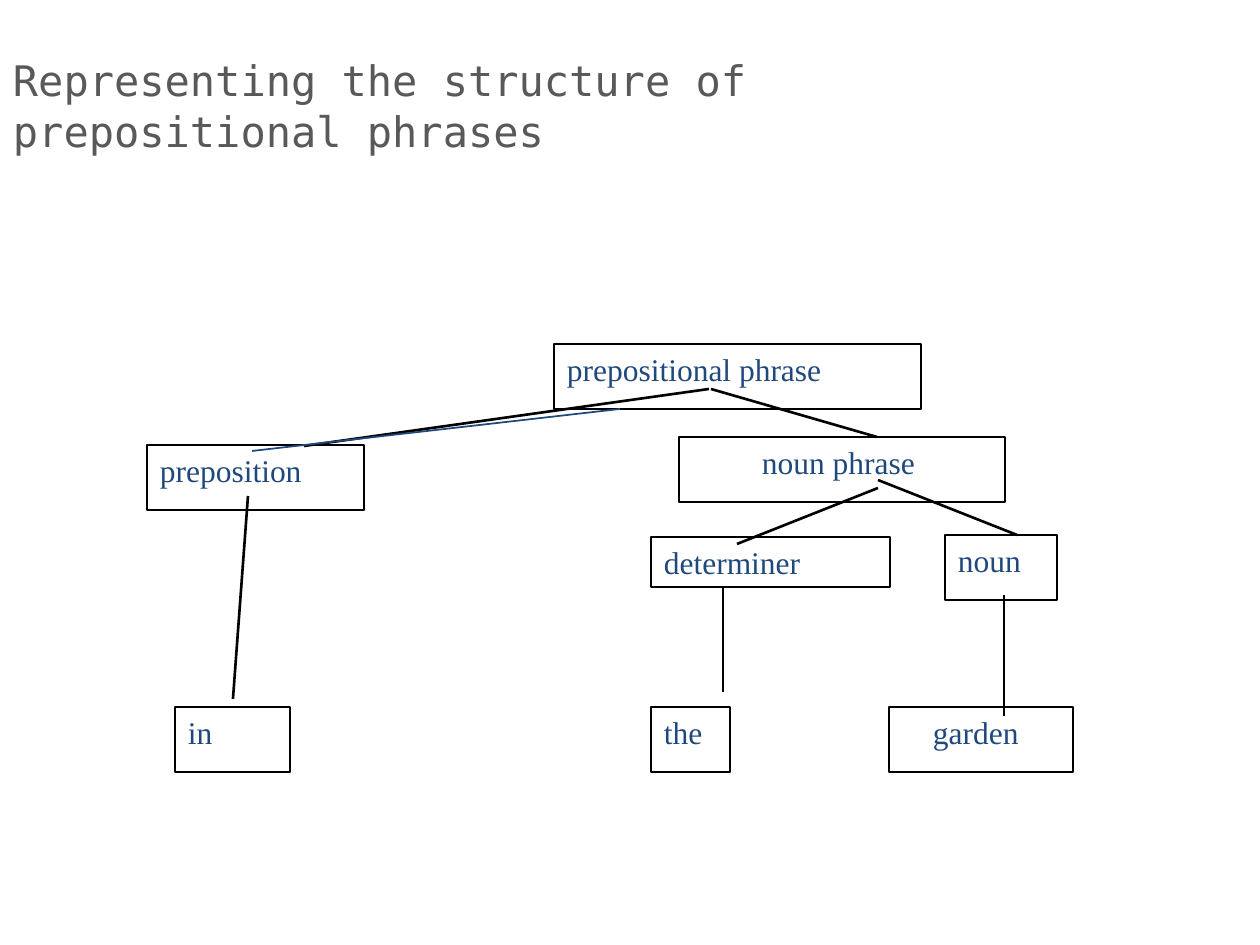
"""Build a slide with the phrase-structure tree of a prepositional phrase."""
from dataclasses import dataclass

from lxml.etree import SubElement
from pptx import Presentation
from pptx.dml.color import RGBColor
from pptx.enum.shapes import MSO_CONNECTOR as Connector, MSO_SHAPE as Shape
from pptx.enum.text import MSO_ANCHOR as Anchor, PP_ALIGN as Align
from pptx.oxml.ns import qn
from pptx.slide import Slide
from pptx.text.text import TextFrame
from pptx.util import Emu, Inches, Pt

PX_PER_INCH = 126
INSET = 13
BLACK = RGBColor(0x00, 0x00, 0x00)
GRAY = RGBColor(0x59, 0x59, 0x59)
NAVY = RGBColor(0x1F, 0x49, 0x7D)


@dataclass(frozen=True)
class Node:
    text: str
    left: int
    top: int
    width: int
    height: int = 65
    indent: int = 0


@dataclass(frozen=True)
class Branch:
    start: tuple[int, int]
    end: tuple[int, int]
    color: RGBColor = BLACK
    weight: float = 1.5


NODES = [
    Node("prepositional phrase", 554, 344, 367),
    Node("preposition", 147, 445, 217),
    Node("noun phrase", 679, 437, 326, indent=70),
    Node("determiner", 651, 537, 239, height=50),
    Node("noun", 945, 535, 112),
    Node("in", 175, 707, 115),
    Node("the", 651, 707, 79),
    Node("garden", 889, 707, 184, indent=31),
]

BRANCHES = [
    Branch((709, 389), (304, 446)),
    Branch((711, 389), (877, 437)),
    Branch((878, 488), (737, 544)),
    Branch((878, 480), (1017, 535)),
    Branch((248, 496), (233, 699)),
    Branch((723, 586), (723, 692)),
    Branch((1004, 595), (1004, 716)),
    Branch((620, 409), (252, 451), NAVY, 1),
]


def px(length: int) -> Emu:
    """Turn whole px into EMU."""
    return Emu(round(Inches(length) / PX_PER_INCH))


def write_text(frame: TextFrame, text: str, font: str, size: int, color: RGBColor, indent: int = 0) -> None:
    """Put one left-aligned paragraph into a text frame."""
    frame.word_wrap = True
    frame.margin_left = px(INSET + indent)
    para = frame.paragraphs[0]
    para.text = text
    para.alignment = Align.LEFT
    para.font.name = font
    para.font.size = Pt(size)
    para.font.color.rgb = color


def draw_title(slide: Slide, text: str) -> None:
    """Draw the slide title."""
    box = slide.shapes.add_textbox(px(0), px(0), px(1029), px(210))
    write_text(box.text_frame, text, "DejaVu Sans Mono", 24, GRAY)
    box.text_frame.vertical_anchor = Anchor.MIDDLE


def draw_node(slide: Slide, node: Node) -> None:
    """Draw one labelled box of the tree."""
    box = slide.shapes.add_shape(
        Shape.RECTANGLE, px(node.left), px(node.top), px(node.width), px(node.height)
    )
    box.shadow.inherit = False
    box.fill.background()
    box.line.color.rgb = BLACK
    box.line.width = Pt(1.5)
    write_text(box.text_frame, node.text, "Times New Roman", 18, NAVY, node.indent)
    box.text_frame.vertical_anchor = Anchor.TOP


def draw_branch(slide: Slide, branch: Branch) -> None:
    """Draw one line between two levels of the tree."""
    ends = [px(length) for length in (*branch.start, *branch.end)]
    line = slide.shapes.add_connector(Connector.STRAIGHT, *ends)
    line.line.color.rgb = branch.color
    line.line.width = Pt(branch.weight)
    SubElement(line._element.spPr, qn("a:effectLst"))


def main() -> None:
    """Build and save the deck."""
    deck = Presentation()
    deck.slide_width = Inches(10)
    deck.slide_height = Inches(7.5)
    slide = deck.slides.add_slide(deck.slide_layouts[6])
    draw_title(slide, "Representing the structure of prepositional phrases")
    for node in NODES:
        draw_node(slide, node)
    for branch in BRANCHES:
        draw_branch(slide, branch)
    deck.save("out.pptx")


if __name__ == "__main__":
    main()
